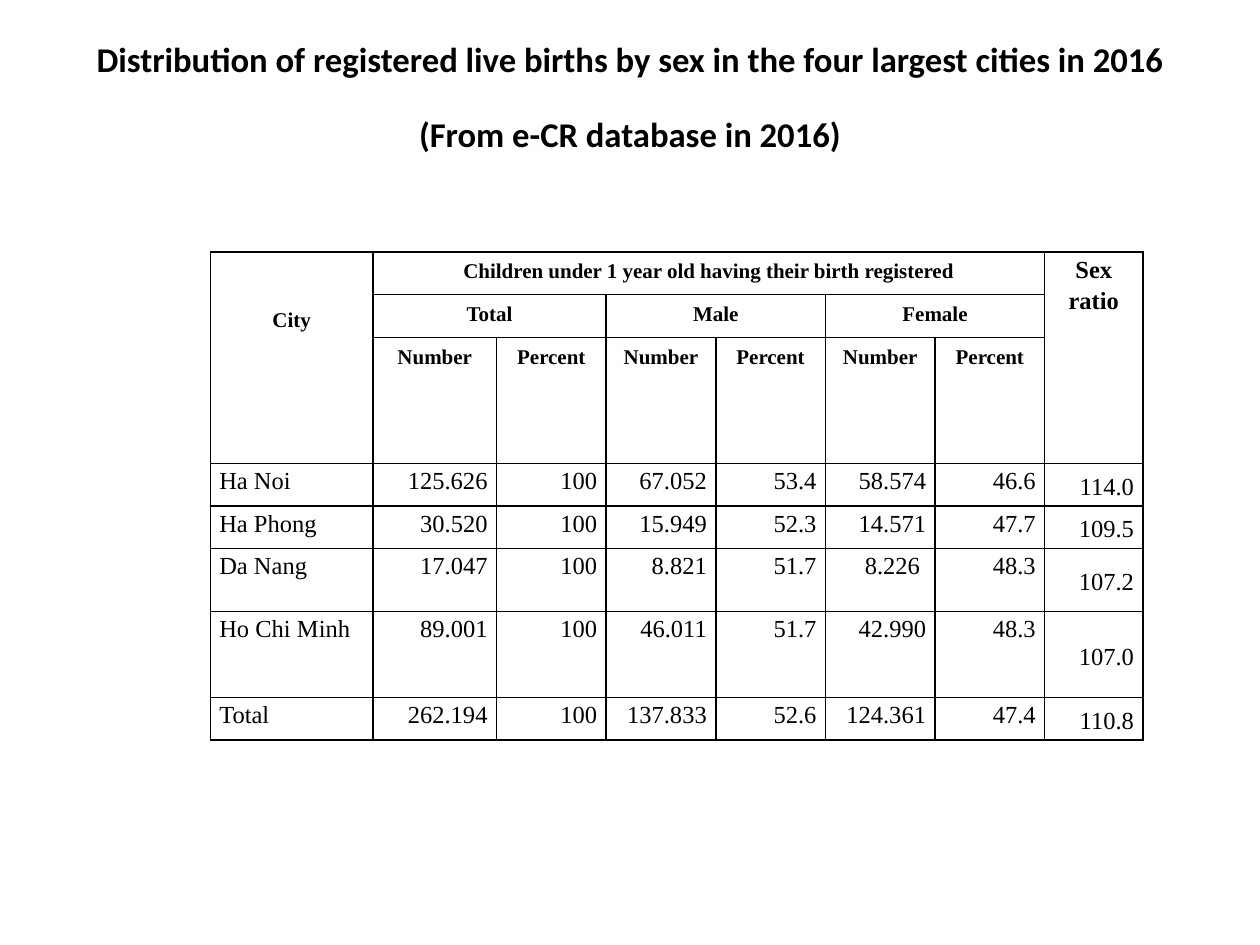
import pptx
import pptx.util
import pptx.dml.color
import pptx.enum.text
import pptx.oxml
import pptx.oxml.ns

Cm, Pt = pptx.util.Cm, pptx.util.Pt
ALIGN = pptx.enum.text.PP_ALIGN
ANCHOR = pptx.enum.text.MSO_ANCHOR
COLORS = {"text": "000000", "border": "000000"}


def write(p, text, font="Times New Roman", size=14, bold=False, align=ALIGN.RIGHT, line=Pt(18), before=0):
    p.alignment = align
    p.line_spacing = line
    p.space_before = Pt(before)
    r = p.add_run()
    r.text = text
    r.font.name = font
    r.font.size = Pt(size)
    r.font.bold = bold
    r.font.color.rgb = pptx.dml.color.RGBColor.from_string(COLORS["text"])


prs = pptx.Presentation()
prs.slide_width, prs.slide_height = Cm(25.4), Cm(19.05)
s = prs.slides.add_slide(prs.slide_layouts[5])

sp = s.shapes.title
sp.left, sp.top, sp.width, sp.height = Cm(1.27), Cm(0.76), Cm(22.86), Cm(3.18)
tf = sp.text_frame
tf.auto_size = pptx.enum.text.MSO_AUTO_SIZE.NONE
tf.vertical_anchor = ANCHOR.TOP
tf.margin_top = 0
title_format = dict(font="Calibri", size=19.8, bold=True, align=ALIGN.CENTER, line=1.0)
write(tf.paragraphs[0], "Distribution of registered live births by sex in the four largest cities in 2016", **title_format)
write(tf.add_paragraph(), "(From e-CR database in 2016)", before=19.2, **title_format)

widths = [3.28, 2.49] + [2.21] * 5 + [1.98]
heights = [0.86, 0.86, 2.54, 0.86, 0.86, 1.27, 1.73, 0.86]
rows = [
    ["City", "Children under 1 year old having their birth registered", "", "", "", "", "", "Sex ratio"],
    ["", "Total", "", "Male", "", "Female", "", ""],
    [""] + ["Number", "Percent"] * 3 + [""],
    ["Ha Noi", "125.626", "100", "67.052", "53.4", "58.574", "46.6", "114.0"],
    ["Ha Phong", "30.520", "100", "15.949", "52.3", "14.571", "47.7", "109.5"],
    ["Da Nang", "17.047", "100", "8.821", "51.7", "8.226 ", "48.3", "107.2"],
    ["Ho Chi Minh", "89.001", "100", "46.011", "51.7", "42.990", "48.3", "107.0"],
    ["Total", "262.194", "100", "137.833", "52.6", "124.361", "47.4", "110.8"],
]
header_rows = 3
last_col = len(widths) - 1

table = s.shapes.add_table(len(rows), len(widths), Cm(4.24), Cm(5.08), Cm(sum(widths)), Cm(sum(heights))).table
table.first_row = table.horz_banding = False
for column, width in zip(table.columns, widths):
    column.width = Cm(width)
for row, height in zip(table.rows, heights):
    row.height = Cm(height)

for i, values in enumerate(rows):
    for j, text in enumerate(values):
        cell = table.cell(i, j)
        cell.margin_left = cell.margin_right = Cm(0.18)
        cell.margin_top = cell.margin_bottom = 0
        tcPr = cell._tc.get_or_add_tcPr()
        for side in ("lnL", "lnR", "lnT", "lnB"):
            tcPr.append(pptx.oxml.parse_xml(
                f'<a:{side} {pptx.oxml.ns.nsdecls("a")} w="{Pt(1)}"><a:solidFill>'
                f'<a:srgbClr val="{COLORS["border"]}"/></a:solidFill></a:{side}>'))
        cell.fill.background()
        p = cell.text_frame.paragraphs[0]
        if not text:
            p.font.size = Pt(12)
        elif i < header_rows:
            write(p, text, size=14 if j == last_col else 12, bold=True, align=ALIGN.CENTER)
        else:
            write(p, text, align=ALIGN.LEFT if j == 0 else ALIGN.RIGHT)
            if j == last_col:
                cell.vertical_anchor = ANCHOR.MIDDLE

table.cell(0, 0).margin_top = Cm(0.97)
for top, left, bottom, right in [(0, 0, 2, 0), (0, 1, 0, 6), (0, 7, 2, 7), (1, 1, 1, 2), (1, 3, 1, 4), (1, 5, 1, 6)]:
    table.cell(top, left).merge(table.cell(bottom, right))

prs.save("out.pptx")
